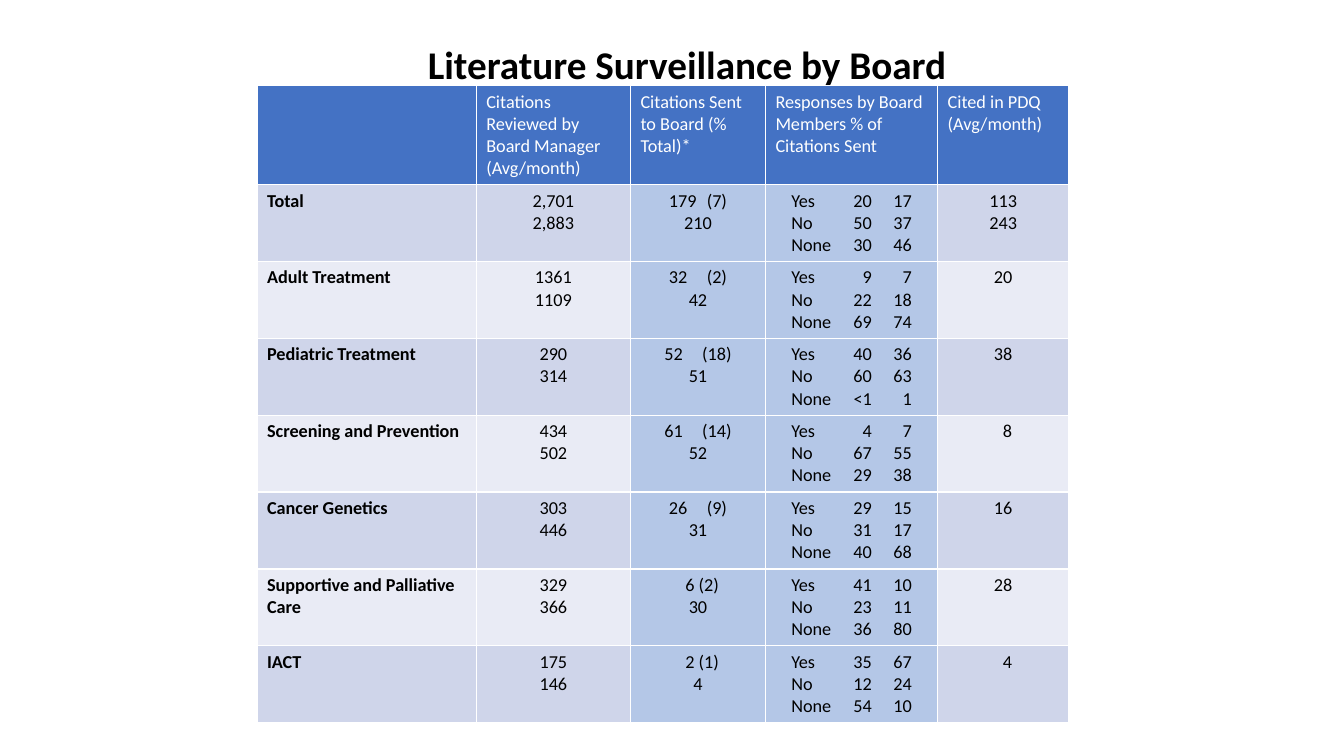
from pptx import Presentation
from pptx.dml.color import RGBColor
from pptx.enum.text import MSO_ANCHOR, PP_ALIGN
from pptx.oxml.xmlchemy import OxmlElement
from pptx.util import Pt

WIDTHS = [156.6, 110.2, 96.4, 123, 93.6]
HEADS = ["", "Citations Reviewed by Board Manager (Avg/month)",
         "Citations Sent to Board (% Total)*",
         "Responses by Board Members % of Citations Sent",
         "Cited in PDQ (Avg/month)"]
ANSWERS = ["Yes", "No", "None"]
# Board, reviewed, sent with percent, sent before, responses, cited
BOARDS = [
    ("Total", "2,701 2,883", 179, "(7)", "210", "20 17 50 37 30 46", "113 243"),
    ("Adult Treatment", "1361 1109", 32, "(2)", "42", "9 7 22 18 69 74", "20"),
    ("Pediatric Treatment", "290 314", 52, "(18)", "51", "40 36 60 63 <1 1", "38"),
    ("Screening and Prevention", "434 502", 61, "(14)", "52", "4 7 67 55 29 38", "8"),
    ("Cancer Genetics", "303 446", 26, "(9)", "31", "29 15 31 17 40 68", "16"),
    ("Supportive and Palliative Care", "329 366", 6, "(2)", "30",
     "41 10 23 11 36 80", "28"),
    ("IACT", "175 146", 2, "(1)", "4", "35 67 12 24 54 10", "4"),
]


def color(code):
    return RGBColor.from_string(code)


def style(para, size, ink="000000", bold=False, align=PP_ALIGN.CENTER):
    para.alignment = align
    font = para.font
    font.name, font.size, font.bold = "Calibri", Pt(size), bold
    font.color.rgb = color(ink)


def indent(para, left, first=0):
    props = para._p.get_or_add_pPr()
    props.set("marL", str(Pt(left)))
    props.set("indent", str(Pt(first)))
    return props


def number(para, start):
    auto = OxmlElement("a:buAutoNum")
    auto.set("type", "arabicPlain")
    auto.set("startAt", str(start))
    indent(para, 27, -27).append(auto)


def add_tabs(para, stops):
    tabs = OxmlElement("a:tabLst")
    for stop in stops:
        tab = OxmlElement("a:tab")
        tab.set("pos", str(Pt(stop)))
        tab.set("algn", "r")
        tabs.append(tab)
    para._p.get_or_add_pPr().append(tabs)


def fill_cell(cell, lines, fill):
    cell.fill.solid()
    cell.fill.fore_color.rgb = color(fill)
    cell.text = "\n".join(lines)
    return cell.text_frame.paragraphs


def add_title(slide, text):
    box = slide.shapes.add_textbox(Pt(234), Pt(20.9), Pt(513.4), Pt(54))
    frame = box.text_frame
    frame.word_wrap = True
    frame.vertical_anchor = MSO_ANCHOR.MIDDLE
    para = frame.paragraphs[0]
    para.text = text
    para.line_spacing = 0.9
    style(para, 28, bold=True)


def add_board(cells, board, band):
    name, seen, sent, share, before, votes, cited = board
    # Board name
    for para in fill_cell(cells[0], [name], band):
        style(para, 13, bold=True, align=PP_ALIGN.LEFT)
    # Citations reviewed
    for para in fill_cell(cells[1], seen.split(), band):
        style(para, 13)
    # Citations sent: larger counts are list numbers
    listed = sent > 9
    first = share if listed else f"{sent} {share}"
    paras = fill_cell(cells[2], [first, before], "B4C7E7")
    if listed:
        number(paras[0], sent)
    else:
        indent(paras[0], 6)
    for para in paras:
        style(para, 13)
    # Responses in two right-aligned columns
    nums = votes.split()
    lines = ["\t".join(row) for row in zip(ANSWERS, nums[::2], nums[1::2])]
    cells[3].margin_left = Pt(18.5)
    for para in fill_cell(cells[3], lines, "B4C7E7"):
        add_tabs(para, [57.5, 86])
        style(para, 13, align=PP_ALIGN.LEFT)
    # Citations used
    for para in fill_cell(cells[4], cited.split(), band):
        if len(cited) == 1:
            indent(para, 6)
        style(para, 13)


def add_grid(slide):
    size = len(BOARDS) + 1, len(WIDTHS)
    grid = slide.shapes.add_table(*size, Pt(183.6), Pt(61.2),
                                  Pt(sum(WIDTHS)), Pt(455.3)).table
    for col, width in zip(grid.columns, WIDTHS):
        col.width = Pt(width)
    for row in grid.rows:
        row.height = Pt(54.9)
    grid.rows[0].height = Pt(70.8)
    # Header row
    for cell, head in zip(grid.rows[0].cells, HEADS):
        for para in fill_cell(cell, [head], "4472C4"):
            style(para, 13, "FFFFFF", align=PP_ALIGN.LEFT)
    # Board rows in alternating bands
    for i, board in enumerate(BOARDS):
        band = "E9EBF5" if i % 2 else "CFD5EA"
        add_board(list(grid.rows[i + 1].cells), board, band)


def main():
    deck = Presentation()
    deck.slide_width, deck.slide_height = Pt(960), Pt(540)
    slide = deck.slides.add_slide(deck.slide_layouts[6])
    add_title(slide, "Literature Surveillance by Board")
    add_grid(slide)
    deck.save("out.pptx")


if __name__ == "__main__":
    main()
